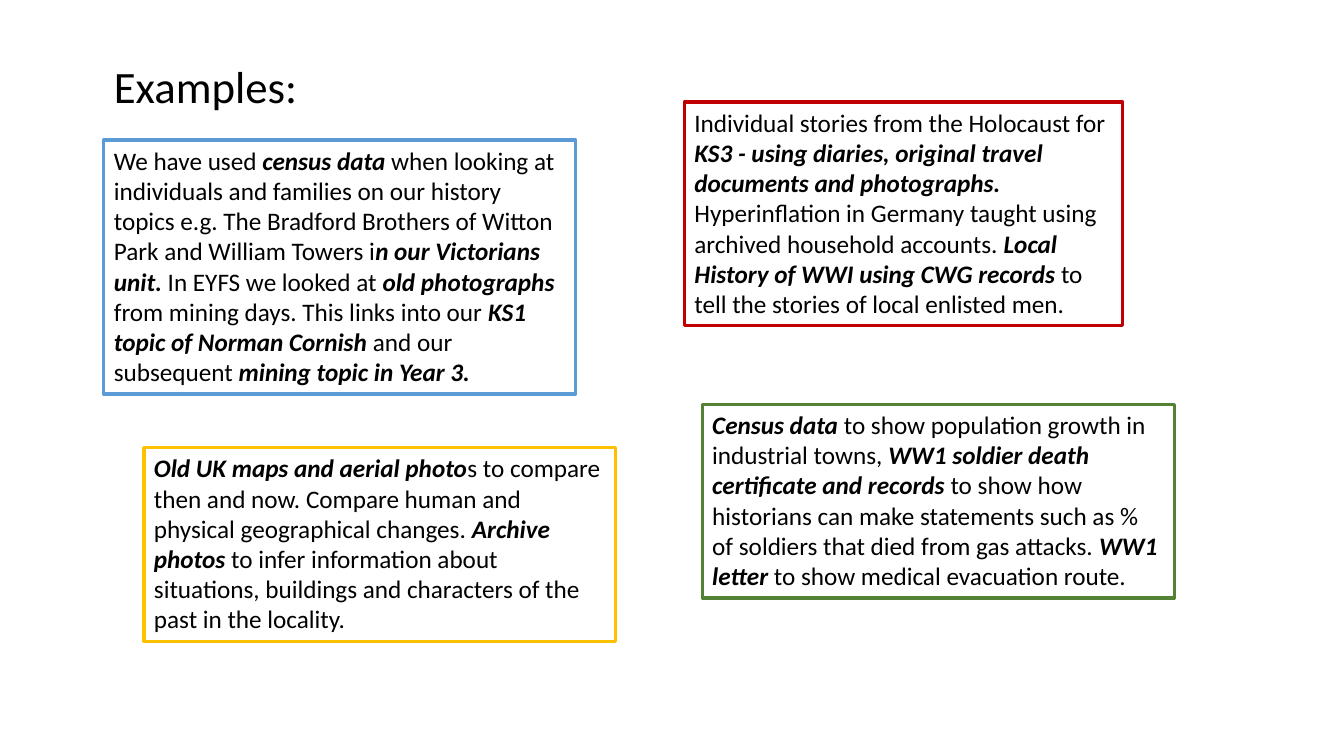
import pptx
import pptx.dml.color
import pptx.enum.text
import pptx.util

Cm = pptx.util.Cm
Pt = pptx.util.Pt

COLORS = {
    "text": "000000",
    "blue": "5B9BD5",
    "red": "C00000",
    "gold": "FFC000",
    "green": "548235",
}

# Each example: outline colour, (left, top, width, height) in cm, text.
# Parts between asterisks are bold italic.
EXAMPLES = [
    ("blue", (2.62, 3.53, 11.89, 6.4),
     "We have used *census data* when looking at individuals and families on "
     "our history topics e.g. The Bradford Brothers of Witton Park and William "
     "Towers i*n our Victorians unit.* In EYFS we looked at *old photographs* "
     "from mining days. This links into our *KS1 topic of Norman Cornish* and "
     "our subsequent *mining topic in Year 3.*"),
    ("red", (17.25, 2.57, 11.05, 5.64),
     "Individual stories from the Holocaust for *KS3 - using diaries, original "
     "travel documents and photographs.* Hyperinflation in Germany taught using "
     "archived household accounts. *Local History of WWI using CWG records* to "
     "tell the stories of local enlisted men."),
    ("gold", (3.63, 11.28, 11.89, 4.88),
     "*Old UK maps and aerial photo*s to compare then and now. Compare human "
     "and physical geographical changes. *Archive photos *to infer information "
     "about situations, buildings and characters of the past in the locality."),
    ("green", (17.7, 10.19, 11.89, 4.88),
     "*Census data* to show population growth in industrial towns, *WW1 soldier "
     "death certificate and records* to show how historians can make statements "
     "such as % of soldiers that died from gas attacks. *WW1 letter *to show "
     "medical evacuation route."),
]


def rgb(name):
    return pptx.dml.color.RGBColor.from_string(COLORS[name])


def add_run(p, text, **formats):
    r = p.add_run()
    r.text = text
    r.font.color.rgb = rgb("text")
    for name, value in {"name": "Calibri", **formats}.items():
        setattr(r.font, name, value)


def add_text_box(s, box, text, size):
    sp = s.shapes.add_textbox(*map(Cm, box))
    tf = sp.text_frame
    formats = {
        "word_wrap": True,
        "auto_size": pptx.enum.text.MSO_AUTO_SIZE.SHAPE_TO_FIT_TEXT,
    }
    for name, value in formats.items():
        setattr(tf, name, value)
    # Every second part is emphasised
    for i, part in enumerate(text.split("*")):
        if part:
            strong = i % 2 == 1
            add_run(tf.paragraphs[0], part, size=Pt(size), bold=strong, italic=strong)
    return sp


def add_example(s, color, box, text):
    sp = add_text_box(s, box, text, 18)
    sp.line.color.rgb = rgb(color)
    sp.line.width = Pt(2.25)


def main():
    prs = pptx.Presentation()
    prs.slide_width, prs.slide_height = Cm(33.87), Cm(19.05)
    s = prs.slides.add_slide(prs.slide_layouts[6])

    # Outlined examples
    for example in EXAMPLES:
        add_example(s, *example)

    # Heading
    add_text_box(s, (2.62, 1.35, 9.58, 1.63), "Examples:", 32)

    prs.save("out.pptx")


if __name__ == "__main__":
    main()
